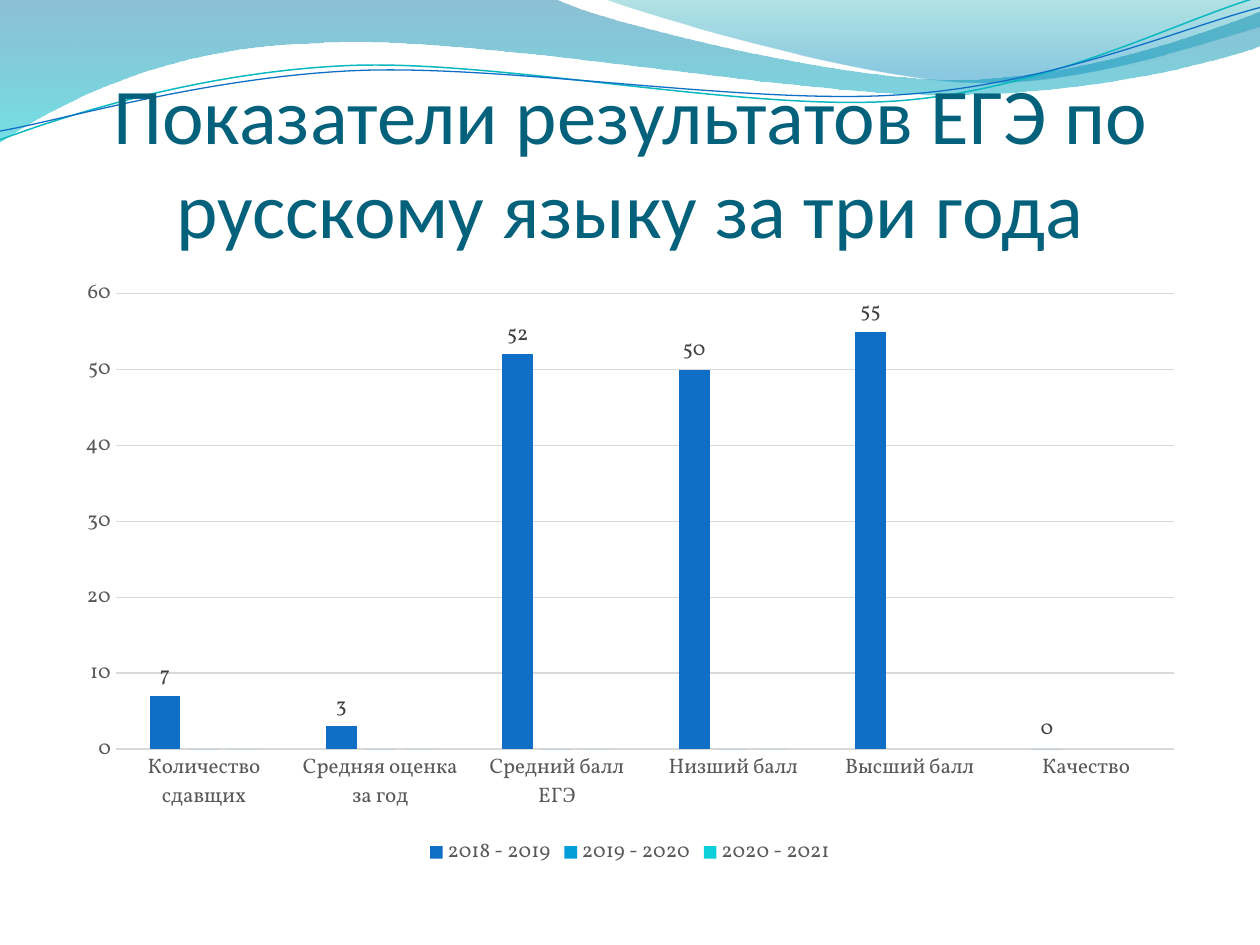
"""Build a slide with a wave header and a column chart of exam results."""
import math
from lxml import etree
from pptx import Presentation, util as u
from pptx.chart.data import CategoryChartData
from pptx.dml.color import RGBColor
from pptx.enum import chart as ch, text as tx
from pptx.oxml.ns import qn

PX = 9144
SIZE = (1000, 750)

THEME = {
    "head": ("Calibri", 45, "04617B"),
    "axis": ("Vollkorn", 12, "595959"),
    "label": ("Vollkorn", 12, "404040"),
    "grid": "D9D9D9",
    "series": ["0F6FC6", "009DD9", "0BD0D9"],
}

TITLE = "Показатели результатов ЕГЭ по русскому языку за три года"
TITLE_BOX = (50, 77, 900, 125)
CHART_BOX = (50, 212, 900, 480)
CATS = ["Количество сдавщих", "Средняя оценка за год", "Средний балл ЕГЭ",
        "Низший балл", "Высший балл", "Качество"]
SERIES = {
    "2018 - 2019": (7, 3, 52, 50, 55, 0),
    "2019 - 2020": (0, 0, 0, 0, None, None),
    "2020 - 2021": (0, 0, 0, 0, None, None),
}

TILT = -2.7
WAVES = [
    {"route": [(0, 0), (440, -1), (476, 17, 664, 63, 758, 63),
               (853, 63, 958, 26, 1000, 9), (1001, 36),
               (983, 44, 870, 76, 746, 75), (622, 75, 382, 28, 257, 34),
               (129, 36, 46, 83, -1, 113), (0, 0)],
     "fill": [(0, "0074A1", 45), (1, "00C6CF", 55)]},
    {"route": [(479, -1), (509, 11, 682, 62, 769, 65),
               (856, 69, 961, 32, 1000, 21), (1000, 0), (479, -1)],
     "fill": [(0, "00A1A9", 30), (0.8, "008BBF", 45)]},
    {"route": [(0, 111), (48, 93, 158, 57, 277, 52),
               (395, 47, 593, 89, 713, 80), (833, 71, 938, 15, 998, -2)],
     "line": ("0AB8BF", 0.85), "mid": (499, 57.5)},
    {"route": [(0, 104), (47, 96, 164, 61, 283, 56),
               (403, 51, 597, 84, 717, 75), (836, 67, 941, 21, 1000, 6)],
     "line": ("0F6FC6", 0.75), "mid": (499.5, 59)},
]


def rgb(code):
    return RGBColor.from_string(code)


def box(dims):
    return [u.Emu(n * PX) for n in dims]


def style(font, key):
    font.name, size, code = THEME[key]
    font.size = u.Pt(size)
    font.color.rgb = rgb(code)


def turn(dot, mid, angle):
    dx, dy = dot[0] - mid[0], dot[1] - mid[1]
    cos, sin = math.cos(math.radians(angle)), math.sin(math.radians(angle))
    return mid[0] + dx * cos - dy * sin, mid[1] + dx * sin + dy * cos


def bend(shape, route):
    steps = iter(list(shape._element.iter(qn("a:lnTo"))))
    for seg in route[1:]:
        first, *rest = [next(steps) for _ in range(len(seg) // 2)]
        if not rest:
            continue
        curve = etree.Element(qn("a:cubicBezTo"))
        first.addprevious(curve)
        for step in (first, *rest):
            curve.append(step[0])
            step.getparent().remove(step)


def add_wave(slide, wave):
    route = wave["route"]
    dots = [seg[i:i + 2] for seg in route for i in range(0, len(seg), 2)]
    if "mid" in wave:
        dots = [turn(dot, wave["mid"], -TILT) for dot in dots]
    dots = [(x * PX, y * PX) for x, y in dots]
    pen = slide.shapes.build_freeform(*dots[0])
    pen.add_line_segments(dots[1:], close="fill" in wave)
    shape = pen.convert_to_shape()
    bend(shape, route)
    shape.shadow.inherit = False
    if "line" in wave:
        code, width = wave["line"]
        shape.rotation = TILT
        shape.fill.background()
        shape.line.color.rgb = rgb(code)
        shape.line.width = u.Pt(width)
        return
    shape.line.fill.background()
    shape.fill.gradient()
    shape.fill.gradient_angle = 270
    for stop, (pos, code, _) in zip(shape.fill.gradient_stops, wave["fill"]):
        stop.position = pos
        stop.color.rgb = rgb(code)
    tints = shape._element.spPr.iter(qn("a:srgbClr"))
    for tint, (_, _, alpha) in zip(tints, wave["fill"]):
        etree.SubElement(tint, qn("a:alpha"), val=str(alpha * 1000))


def set_title(slide):
    title = slide.shapes.title
    title.left, title.top, title.width, title.height = box(TITLE_BOX)
    frame = title.text_frame
    frame.text = TITLE
    frame.auto_size = tx.MSO_AUTO_SIZE.NONE
    frame.word_wrap = True
    frame.vertical_anchor = tx.MSO_ANCHOR.BOTTOM
    frame.margin_left = frame.margin_right = frame.margin_bottom = 0
    frame.margin_top = u.Inches(0.05)
    para = frame.paragraphs[0]
    para.alignment = tx.PP_ALIGN.CENTER
    style(para.font, "head")
    slide.shapes._spTree.append(title._element)


def add_columns(slide):
    data = CategoryChartData()
    data.categories = CATS
    for name, vals in SERIES.items():
        data.add_series(name, vals)
    kind = ch.XL_CHART_TYPE.COLUMN_CLUSTERED
    chart = slide.shapes.add_chart(kind, *box(CHART_BOX), data).chart
    style(chart.font, "axis")
    chart.has_title = False
    chart.has_legend = True
    chart.legend.position = ch.XL_LEGEND_POSITION.BOTTOM
    chart.legend.include_in_layout = False
    style(chart.legend.font, "axis")

    cat, val = chart.category_axis, chart.value_axis
    for axis in (cat, val):
        axis.major_tick_mark = axis.minor_tick_mark = ch.XL_TICK_MARK.NONE
        style(axis.tick_labels.font, "axis")
    val.minimum_scale, val.maximum_scale, val.major_unit = 0, 60, 10
    val.format.line.fill.background()
    for line in (cat.format.line, val.major_gridlines.format.line):
        line.color.rgb = rgb(THEME["grid"])
        line.width = u.Pt(0.75)

    plot = chart.plots[0]
    plot.gap_width, plot.overlap = 219, -27
    plot.vary_by_categories = False
    for bars, code in zip(plot.series, THEME["series"]):
        bars.format.fill.solid()
        bars.format.fill.fore_color.rgb = rgb(code)
    labels = plot.series[0].data_labels
    labels.show_value = True
    labels.position = ch.XL_LABEL_POSITION.OUTSIDE_END
    style(labels.font, "label")


def main():
    deck = Presentation()
    deck.slide_width, deck.slide_height = box(SIZE)
    slide = deck.slides.add_slide(deck.slide_layouts[5])
    for wave in WAVES:
        add_wave(slide, wave)
    set_title(slide)
    add_columns(slide)
    deck.save("out.pptx")


if __name__ == "__main__":
    main()
